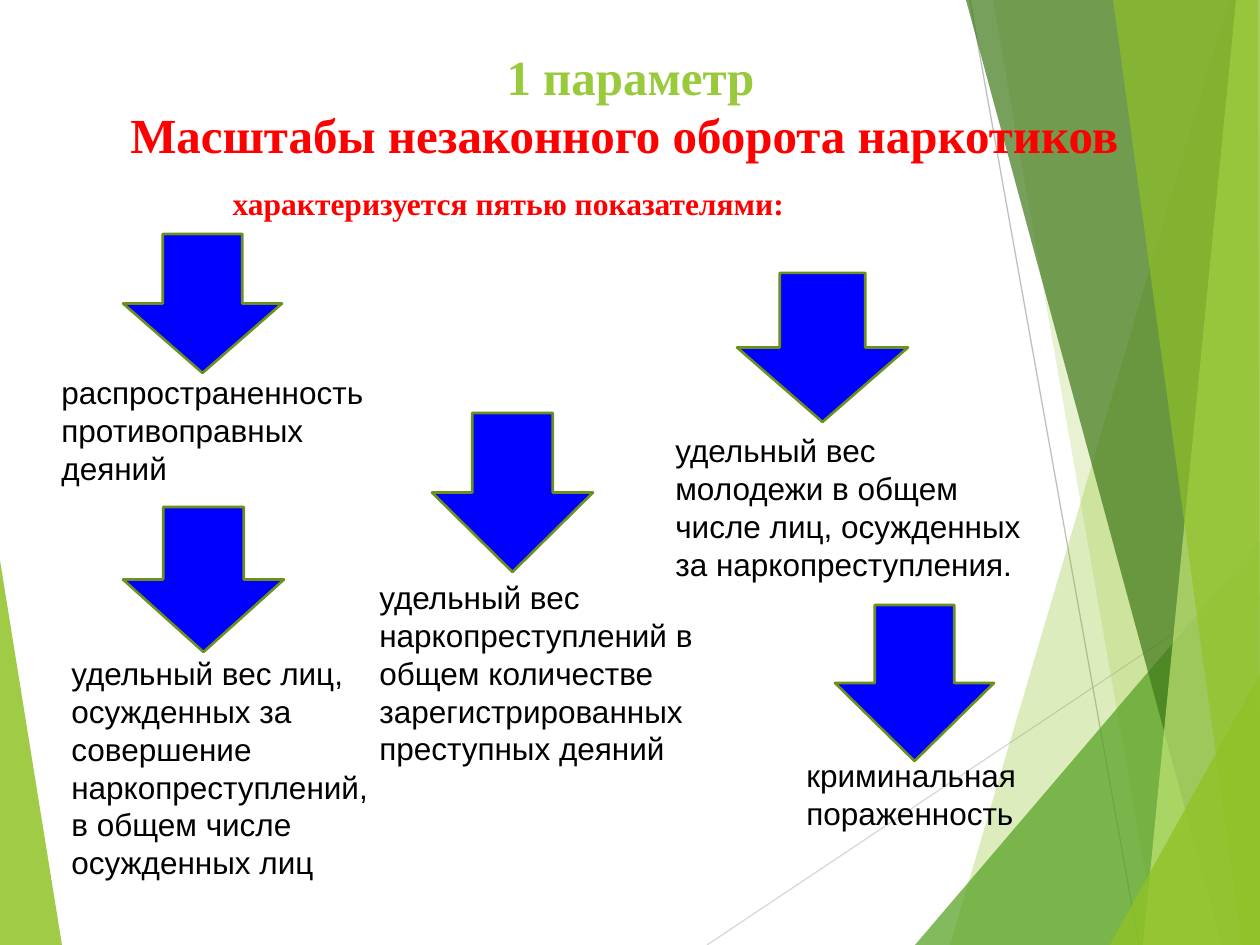
from lxml.etree import SubElement
from pptx import Presentation
from pptx.dml.color import RGBColor
from pptx.enum.shapes import MSO_CONNECTOR, MSO_SHAPE
from pptx.enum.text import MSO_ANCHOR, MSO_AUTO_SIZE, PP_ALIGN
from pptx.oxml.ns import qn
from pptx.util import Pt

PX = 914400 / 126
W, H = 1260, 945
RED, GREEN, BLACK = "FF0000", "99CA3C", "000000"
SERIF, SANS = "Times New Roman", "Arial"

TITLE = [("1 параметр", GREEN), ("Масштабы незаконного оборота наркотиков ", RED)]
SUBTITLE = "характеризуется пятью показателями:"
INDICATORS = [
    ("распространенность противоправных деяний",
     (123, 234, 159, 139), (49, 367, 362, 165)),
    ("удельный вес молодежи в общем числе лиц, осужденных за наркопреступления.",
     (737, 273, 171, 149), (663, 425, 377, 204)),
    ("удельный вес наркопреступлений в общем количестве зарегистрированных преступных деяний",
     (432, 413, 161, 159), (367, 572, 343, 204)),
    ("удельный вес лиц, осужденных за совершение наркопреступлений, в общем числе осужденных лиц",
     (123, 507, 161, 145), (59, 648, 343, 242)),
    ("криминальная пораженность",
     (835, 605, 159, 156), (794, 750, 248, 89)),
]
LEFT_WEDGE = ([(0, 560), (62, H), (0, H)], "90C226", 85)
RAYS = [((707, H), (W, 576), "D9D9D9"), ((970, 0), (1139, H), "BFBFBF")]
FACETS = [
    ([(1229, 0), (950, H), (W, H), (W, 0)], "90C226", 30),
    ([(993, 0), (1158, H), (W, H), (W, 0)], "90C226", 20),
    ([(915, H), (W, 541), (W, H)], "54A021", 72),
    ([(966, 0), (1222, H), (W, H), (W, 0)], "3F7819", 70),
    ([(1236, 0), (1143, H), (W, H), (W, 0)], "C0E474", 70),
    ([(1113, 0), (1242, H), (W, H), (1258, 0)], "90C226", 65),
    ([(1110, H), (W, 674), (W, H)], "90C226", 80),
]


def px(*values):
    """Turn pixel lengths into EMU."""
    return [round(v * PX) for v in values]


def rgb(color):
    """Turn a hex string into a colour."""
    return RGBColor.from_string(color)


def paint(sp, color):
    """Give a shape a solid fill without shadow."""
    sp.shadow.inherit = False
    sp.fill.solid()
    sp.fill.fore_color.rgb = rgb(color)


def style(r, font, size, color, bold=False):
    """Format one run."""
    r.font.name, r.font.size, r.font.bold = font, Pt(size), bold
    r.font.color.rgb = rgb(color)


def add_facet(slide, points, color, alpha):
    """Draw one translucent polygon."""
    builder = slide.shapes.build_freeform(*points[0], scale=PX)
    builder.add_line_segments(points[1:], close=True)
    sp = builder.convert_to_shape()
    paint(sp, color)
    sp.line.fill.background()
    clr = sp._element.spPr.find(qn("a:solidFill"))[0]
    SubElement(clr, qn("a:alpha")).set("val", str(alpha * 1000))


def add_ray(slide, start, end, color):
    """Draw one thin background line."""
    line = slide.shapes.add_connector(MSO_CONNECTOR.STRAIGHT, *px(*start, *end))
    line.line.color.rgb = rgb(color)
    line.line.width = Pt(0.75)
    SubElement(line._element.spPr, qn("a:effectLst"))


def add_indicator(slide, text, arrow, box):
    """Draw a down arrow and the text it points to."""
    sp = slide.shapes.add_shape(MSO_SHAPE.DOWN_ARROW, *px(*arrow))
    paint(sp, "0000FF")
    sp.line.color.rgb = rgb("6B901C")
    sp.line.width = Pt(1.5)
    tf = slide.shapes.add_textbox(*px(*box)).text_frame
    tf.word_wrap = True
    tf.text = text
    p = tf.paragraphs[0]
    p.line_spacing = Pt(21.6)
    style(p.runs[0], SANS, 18, BLACK)


def place(slide, sp, box, top, text):
    """Move a placeholder to the front, set its text and return its paragraph."""
    slide.shapes._spTree.append(sp._element)
    sp.left, sp.top, sp.width, sp.height = px(*box)
    tf = sp.text_frame
    tf.auto_size = MSO_AUTO_SIZE.NONE
    tf.vertical_anchor = MSO_ANCHOR.TOP
    tf.margin_top = px(top)[0]
    p = tf.paragraphs[0]
    p.text = text
    p.space_before = Pt(0)
    return p


def main():
    """Build and save the slide."""
    prs = Presentation()
    prs.slide_width, prs.slide_height = px(W, H)
    slide = prs.slides.add_slide(prs.slide_layouts[1])
    title, body = slide.placeholders

    add_facet(slide, *LEFT_WEDGE)
    for ray in RAYS:
        add_ray(slide, *ray)
    for facet in FACETS:
        add_facet(slide, *facet)

    p = place(slide, title, (25, 37, 1211, 166), 11, "\v".join(t for t, _ in TITLE))
    p.alignment = PP_ALIGN.CENTER
    p.line_spacing = Pt(33)
    for r, (_, color) in zip(p.runs, TITLE):
        style(r, SERIF, 28, color, True)

    p = place(slide, body, (0, 165, W, 624), 19, SUBTITLE)
    style(p.runs[0], SERIF, 18, RED, True)
    pPr = p._p.get_or_add_pPr()
    pPr.set("marL", str(px(220)[0]))
    pPr.set("indent", "0")
    SubElement(pPr, qn("a:buNone"))

    for indicator in INDICATORS:
        add_indicator(slide, *indicator)
    prs.save("out.pptx")


if __name__ == "__main__":
    main()
